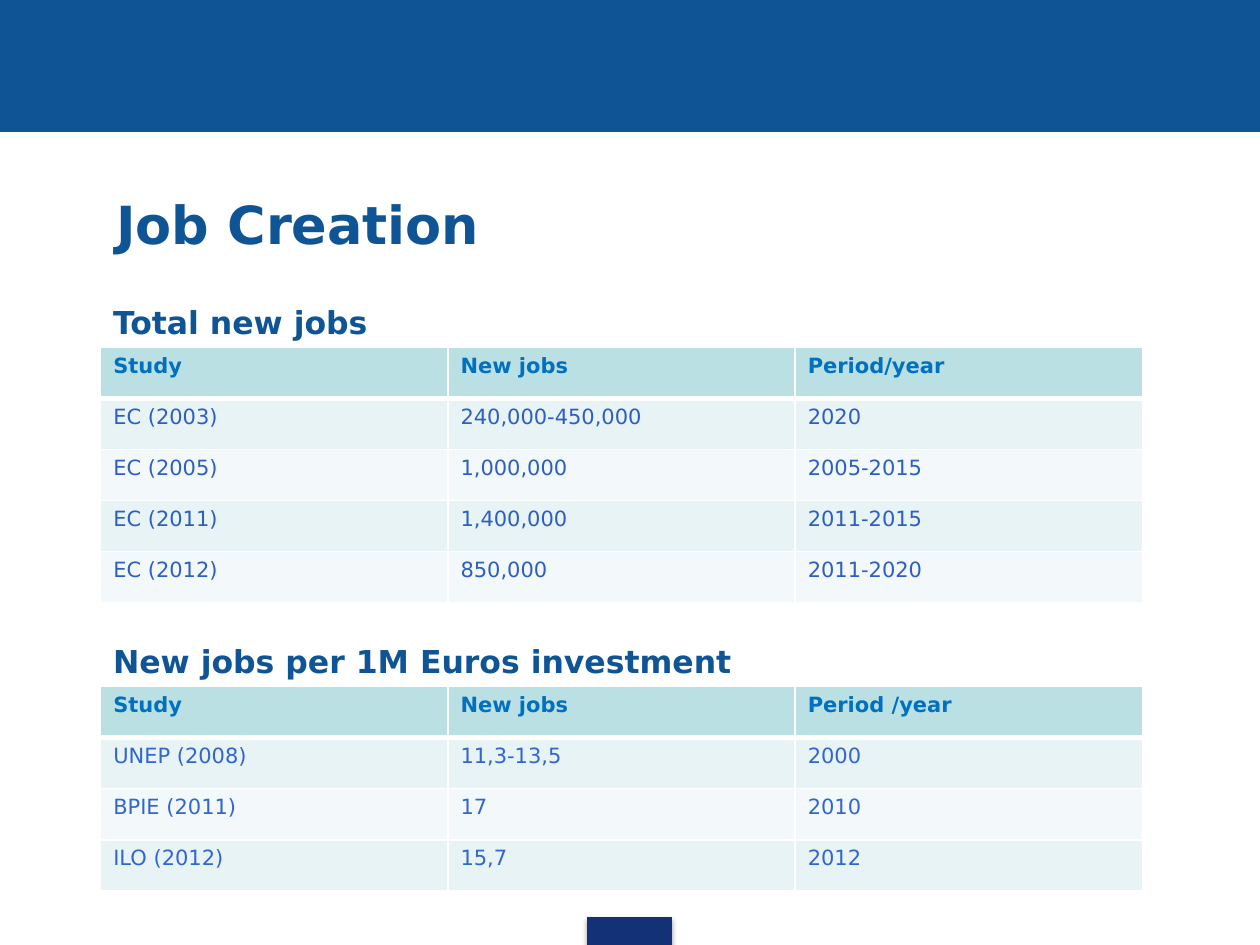
from dataclasses import dataclass

from lxml.etree import SubElement
from pptx import Presentation
from pptx.dml.color import RGBColor as RGB
from pptx.enum.shapes import MSO_SHAPE as Shape
from pptx.enum.text import MSO_ANCHOR as Anchor, PP_ALIGN as Align
from pptx.oxml.ns import qn
from pptx.util import Cm, Pt


@dataclass(frozen=True)
class Theme:
    font: str = "DejaVu Sans"
    blue: str = "0F5494"
    navy: str = "133176"
    white: str = "FFFFFF"
    black: str = "000000"
    header_text: str = "0070C0"
    total_text: str = "2D5EC1"
    rate_text: str = "3166CF"
    header_fill: str = "BBE0E3"
    bands: tuple = ("E7F3F4", "F3F9FA")
    title: int = 30
    heading: int = 18
    cell: int = 12
    rule: int = 1
    header_rule: int = 3


THEME = Theme()

TOTAL_JOBS = [
    ("Study", "New jobs", "Period/year"),
    ("EC (2003)", "240,000-450,000", "2020"),
    ("EC (2005)", "1,000,000", "2005-2015"),
    ("EC (2011)", "1,400,000", "2011-2015"),
    ("EC (2012)", "850,000", "2011-2020"),
]
JOBS_PER_MILLION = [
    ("Study", "New jobs", "Period /year"),
    ("UNEP (2008)", "11,3-13,5", "2000"),
    ("BPIE (2011)", "17", "2010"),
    ("ILO (2012)", "15,7", "2012"),
]


def write(tf, text, size, color, bold=False, indent=None):
    p = tf.paragraphs[0]
    p.alignment = Align.LEFT
    if indent is not None:
        pPr = p._p.get_or_add_pPr()
        pPr.set("marL", str(Cm(indent)))
        pPr.set("indent", "0")
    r = p.add_run()
    r.text = text
    font = r.font
    font.name, font.size, font.bold = THEME.font, Pt(size), bold
    font.color.rgb = RGB.from_string(color)


def add_block(s, left, top, width, height, color):
    sp = s.shapes.add_shape(Shape.RECTANGLE, Cm(left), Cm(top), Cm(width), Cm(height))
    sp.shadow.inherit = False
    sp.fill.solid()
    sp.fill.fore_color.rgb = RGB.from_string(color)
    sp.line.color.rgb = RGB.from_string(color)
    sp.line.width = Pt(0.75)
    return sp


def add_frame(s, width, height):
    add_block(s, 0, 0, width, 2.66, THEME.blue)
    tab_width, tab_height = 1.7, 0.56
    tab = add_block(s, (width - tab_width) / 2 - 0.01, height - tab_height,
                    tab_width, tab_height, THEME.navy)
    effects = tab._element.spPr.find(qn("a:effectLst"))
    shadow = SubElement(effects, qn("a:outerShdw"), blurRad=str(Pt(3.1)),
                        dist=str(Pt(1.8)), dir="5400000", rotWithShape="0")
    color = SubElement(shadow, qn("a:srgbClr"), val=THEME.black)
    SubElement(color, qn("a:alpha"), val="35000")


def add_title(s, text, left, top, width, height):
    title = s.shapes.title
    title.left, title.top, title.width, title.height = map(Cm, (left, top, width, height))
    title.text_frame.word_wrap = True
    title.text_frame.vertical_anchor = Anchor.MIDDLE
    write(title.text_frame, text, THEME.title, THEME.blue, bold=True, indent=1)


def set_borders(cell, row):
    tcPr = cell._tc.get_or_add_tcPr()
    widths = {"a:lnL": THEME.rule, "a:lnR": THEME.rule,
              "a:lnT": THEME.header_rule if row == 1 else THEME.rule,
              "a:lnB": THEME.header_rule if row == 0 else THEME.rule}
    for tag, width in widths.items():
        ln = SubElement(tcPr, qn(tag), w=str(Pt(width)))
        fill = SubElement(ln, qn("a:solidFill"))
        SubElement(fill, qn("a:srgbClr"), val=THEME.white)


def add_section(s, heading, rows, color, left, top, width):
    heading_height, row_height = 1.02, 1.03
    box = s.shapes.add_textbox(Cm(left), Cm(top), Cm(width), Cm(heading_height))
    box.text_frame.word_wrap = True
    write(box.text_frame, heading, THEME.heading, THEME.blue, bold=True)

    table = s.shapes.add_table(len(rows), len(rows[0]), Cm(left), Cm(top + heading_height),
                               Cm(width), Cm(row_height * len(rows))).table
    for i, values in enumerate(rows):
        table.rows[i].height = Cm(row_height)
        header = i == 0
        fill = THEME.header_fill if header else THEME.bands[(i - 1) % 2]
        for j, value in enumerate(values):
            cell = table.cell(i, j)
            set_borders(cell, i)
            cell.fill.solid()
            cell.fill.fore_color.rgb = RGB.from_string(fill)
            write(cell.text_frame, value, THEME.cell,
                  THEME.header_text if header else color, bold=header)


def main():
    width, height = 25.4, 19.05
    prs = Presentation()
    prs.slide_width, prs.slide_height = Cm(width), Cm(height)
    s = prs.slides.add_slide(prs.slide_layouts[5])
    add_frame(s, width, height)
    add_title(s, "Job Creation", 1.09, 3.2, 22.86, 2.6)
    add_section(s, "Total new jobs", TOTAL_JOBS, THEME.total_text, 2.03, 5.98, 21)
    add_section(s, "New jobs per 1M Euros investment", JOBS_PER_MILLION,
                THEME.rate_text, 2.03, 12.82, 21)
    prs.save("out.pptx")


if __name__ == "__main__":
    main()
